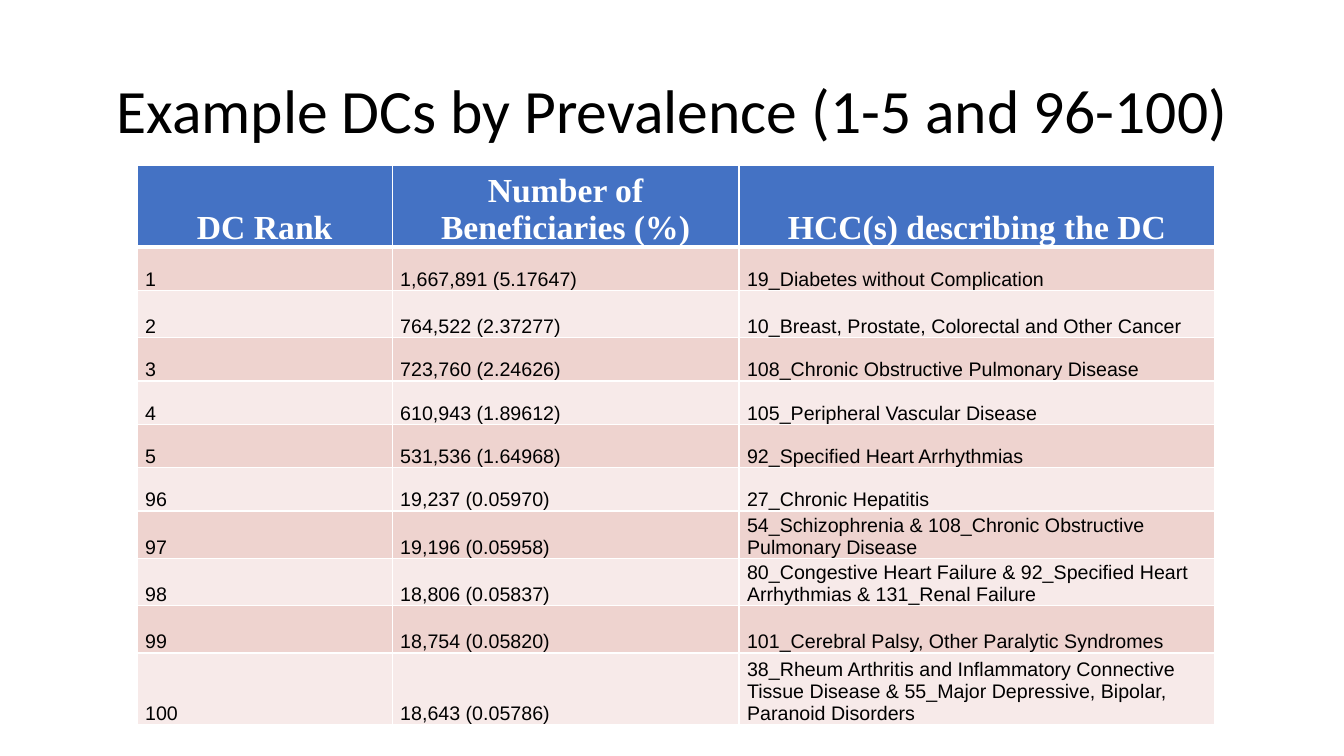
from dataclasses import dataclass

from lxml import etree
from pptx import Presentation
from pptx.dml.color import RGBColor
from pptx.enum.text import MSO_ANCHOR, PP_ALIGN
from pptx.oxml.ns import qn
from pptx.util import Inches, Pt

CENTER, LEFT = PP_ALIGN.CENTER, PP_ALIGN.LEFT
MIDDLE, BOTTOM = MSO_ANCHOR.MIDDLE, MSO_ANCHOR.BOTTOM


@dataclass(frozen=True)
class Theme:
    black: str = "000000"
    white: str = "FFFFFF"
    header: str = "4472C4"
    bands: tuple = ("EED3CF", "F7EAE9")
    title_font: str = "Calibri"
    header_font: str = "Times New Roman"
    body_font: str = "Arial"
    title_size: int = 44
    header_size: int = 24
    body_size: int = 14


theme = Theme()

COLUMN_WIDTHS = [2.53, 3.44, 4.72]
ROW_HEIGHTS = [0.81, 0.43, 0.47, 0.43, 0.43, 0.43, 0.43, 0.47, 0.47, 0.47, 0.71]
ROWS = [
    ("DC Rank", "Number of Beneficiaries (%)", "HCC(s) describing the DC"),
    ("1", "1,667,891 (5.17647)", "19_Diabetes without Complication"),
    ("2", "764,522 (2.37277)", "10_Breast, Prostate, Colorectal and Other Cancer"),
    ("3", "723,760 (2.24626)", "108_Chronic Obstructive Pulmonary Disease"),
    ("4", "610,943 (1.89612)", "105_Peripheral Vascular Disease"),
    ("5", "531,536 (1.64968)", "92_Specified Heart Arrhythmias"),
    ("96", "19,237 (0.05970)", "27_Chronic Hepatitis"),
    ("97", "19,196 (0.05958)",
     "54_Schizophrenia & 108_Chronic Obstructive Pulmonary Disease"),
    ("98", "18,806 (0.05837)",
     "80_Congestive Heart Failure & 92_Specified Heart Arrhythmias & 131_Renal Failure"),
    ("99", "18,754 (0.05820)", "101_Cerebral Palsy, Other Paralytic Syndromes"),
    ("100", "18,643 (0.05786)",
     "38_Rheum Arthritis and Inflammatory Connective Tissue Disease"
     " & 55_Major Depressive, Bipolar, Paranoid Disorders"),
]


def format_text(p, font, size, color, align, bold=False):
    p.alignment = align
    for r in p.runs:
        r.font.name = font
        r.font.size = Pt(size)
        r.font.bold = bold
        r.font.color.rgb = RGBColor.from_string(color)


def add_borders(cell, widths):
    tc_pr = cell._tc.get_or_add_tcPr()
    for side, width in widths.items():
        ln = etree.SubElement(tc_pr, qn(f"a:ln{side}"), w=str(Pt(width)))
        fill = etree.SubElement(ln, qn("a:solidFill"))
        etree.SubElement(fill, qn("a:srgbClr"), val=theme.white)


prs = Presentation()
prs.slide_width, prs.slide_height = Inches(13.33), Inches(7.5)
slide = prs.slides.add_slide(prs.slide_layouts[5])

# Title
title = slide.shapes.title
title.left, title.top = Inches(0.92), Inches(0.4)
title.width, title.height = Inches(11.5), Inches(1.45)
tf = title.text_frame
tf.text = "Example DCs by Prevalence (1-5 and 96-100)"
tf.vertical_anchor = MIDDLE
p = tf.paragraphs[0]
p.line_spacing = 0.9
format_text(p, theme.title_font, theme.title_size, theme.black, CENTER)

# Table grid
table = slide.shapes.add_table(
    len(ROWS), len(COLUMN_WIDTHS), Inches(1.36), Inches(1.64),
    Inches(sum(COLUMN_WIDTHS)), Inches(sum(ROW_HEIGHTS))).table
for column, width in zip(table.columns, COLUMN_WIDTHS):
    column.width = Inches(width)
for row, height in zip(table.rows, ROW_HEIGHTS):
    row.height = Inches(height)

# Header row and banded body rows
for i, values in enumerate(ROWS):
    is_header = i == 0
    fill_color = theme.header if is_header else theme.bands[(i - 1) % 2]
    borders = {"L": 1, "R": 1, "T": 3 if i == 1 else 1, "B": 3 if is_header else 1}
    for j, value in enumerate(values):
        cell = table.cell(i, j)
        cell.text_frame.text = value
        cell.vertical_anchor = BOTTOM
        cell.margin_left = cell.margin_right = Inches(0.08)
        cell.margin_top = cell.margin_bottom = 0
        add_borders(cell, borders)
        cell.fill.solid()
        cell.fill.fore_color.rgb = RGBColor.from_string(fill_color)
        p = cell.text_frame.paragraphs[0]
        if is_header:
            format_text(p, theme.header_font, theme.header_size, theme.white, CENTER, True)
        else:
            format_text(p, theme.body_font, theme.body_size, theme.black, LEFT)

prs.save("out.pptx")
